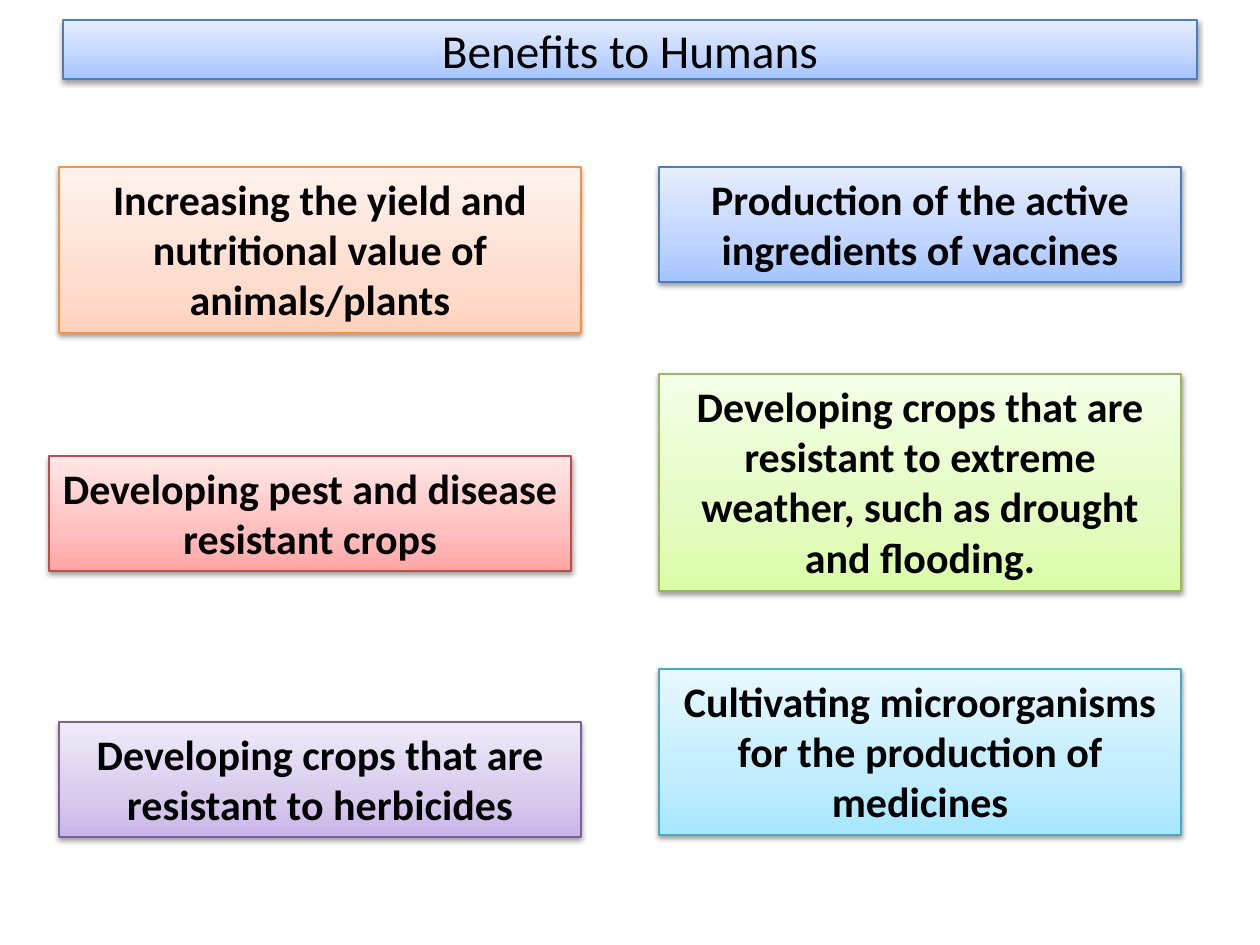
from copy import deepcopy

from lxml.etree import SubElement
from pptx import Presentation
from pptx.dml.color import RGBColor
from pptx.enum.shapes import MSO_SHAPE
from pptx.enum.text import MSO_ANCHOR, MSO_AUTO_SIZE, PP_ALIGN
from pptx.oxml.ns import qn
from pptx.util import Emu, Pt

SCALE = 914400 / 126
LEFT, RIGHT = 59, 659
BOX_WIDTH, LINE_HEIGHT, PADDING = 522, 51, 13

BLUE = ("4B7EBC", "A4C4FF", "BFD4FF", "E6EEFF")
RED = ("BF4C48", "FFA6A5", "FFC0BF", "FFE7E7")
AQUA = ("46AAC5", "A7E6FF", "C1EDFF", "E7F8FF")
GREEN = ("98B955", "DAFDA7", "E4FCC2", "F5FFE7")
PURPLE = ("7D60A0", "C9B5E8", "D8CBEE", "F0EAF9")
ORANGE = ("F69240", "FFD2BD", "FFDED0", "FFF2ED")

BENEFITS = [
    (LEFT - 10, 456, 2, RED, "Developing pest and disease resistant crops"),
    (RIGHT, 669, 3, AQUA, "Cultivating microorganisms for the production of medicines"),
    (RIGHT, 167, 2, BLUE, "Production of the active ingredients of vaccines"),
    (RIGHT, 374, 4, GREEN,
     "Developing crops that are resistant to extreme weather, such as drought and flooding."),
    (LEFT, 722, 2, PURPLE, "Developing crops that are resistant to herbicides"),
    (LEFT, 167, 3, ORANGE, "Increasing the yield and nutritional value of animals/plants"),
]


def px(length):
    """Turn whole pixels into EMU."""
    return Emu(round(length * SCALE))


def color(value):
    """Turn a hex string into a colour."""
    return RGBColor.from_string(value)


class BenefitsSlide:
    """Holds the style and the current slide."""

    font = "Calibri"
    ink = "000000"
    stops = (0, 0.35, 1)

    def __init__(self, page):
        """Keep the page to draw on."""
        self.page = page

    def paint(self, box, palette):
        """Give a box its outline, three-stop gradient and soft shadow."""
        outline, *shades = palette
        box.fill.gradient()
        box.fill.gradient_angle = 90
        stop_list = box._element.spPr.find(".//" + qn("a:gsLst"))
        stop_list.append(deepcopy(stop_list[-1]))
        for stop, position, shade in zip(box.fill.gradient_stops, self.stops, shades):
            stop.position = position
            stop.color.rgb = color(shade)
        box.line.color.rgb = color(outline)
        box.line.width = Pt(0.75)
        box.shadow.inherit = False
        effects = box._element.spPr.find(qn("a:effectLst"))
        shadow = SubElement(effects, qn("a:outerShdw"), blurRad=str(Pt(3.1)),
                            dist=str(Pt(1.6)), dir="5400000", rotWithShape="0")
        tone = SubElement(shadow, qn("a:srgbClr"), val=self.ink)
        SubElement(tone, qn("a:alpha"), val="38000")

    def add_text(self, box, text, size, bold, anchor, auto_size):
        """Put one centred paragraph in a box."""
        frame = box.text_frame
        frame.word_wrap = True
        frame.auto_size = auto_size
        frame.vertical_anchor = anchor
        para = frame.paragraphs[0]
        para.alignment = PP_ALIGN.CENTER
        span = para.add_run()
        span.text = text
        span.font.name = self.font
        span.font.size = Pt(size)
        span.font.bold = bold
        span.font.color.rgb = color(self.ink)

    def title(self, left, top, width, height, palette, text):
        """Move, paint and fill the title placeholder."""
        box = self.page.shapes.title
        box.left, box.top, box.width, box.height = map(px, (left, top, width, height))
        self.paint(box, palette)
        self.add_text(box, text, 27, False, MSO_ANCHOR.MIDDLE, MSO_AUTO_SIZE.NONE)

    def benefit(self, left, top, lines, palette, text):
        """Add a benefit box as tall as its lines of text."""
        height = PADDING + LINE_HEIGHT * lines
        box = self.page.shapes.add_shape(
            MSO_SHAPE.RECTANGLE, *map(px, (left, top, BOX_WIDTH, height)))
        self.paint(box, palette)
        self.add_text(box, text, 24, True, MSO_ANCHOR.TOP, MSO_AUTO_SIZE.SHAPE_TO_FIT_TEXT)


def main():
    """Build and save the deck."""
    deck = Presentation()
    deck.slide_width, deck.slide_height = px(1260), px(945)
    slide = BenefitsSlide(deck.slides.add_slide(deck.slide_layouts[5]))
    slide.title(63, 20, 1134, 59, BLUE, "Benefits to Humans")
    for benefit in BENEFITS:
        slide.benefit(*benefit)
    deck.save("out.pptx")


if __name__ == "__main__":
    main()
